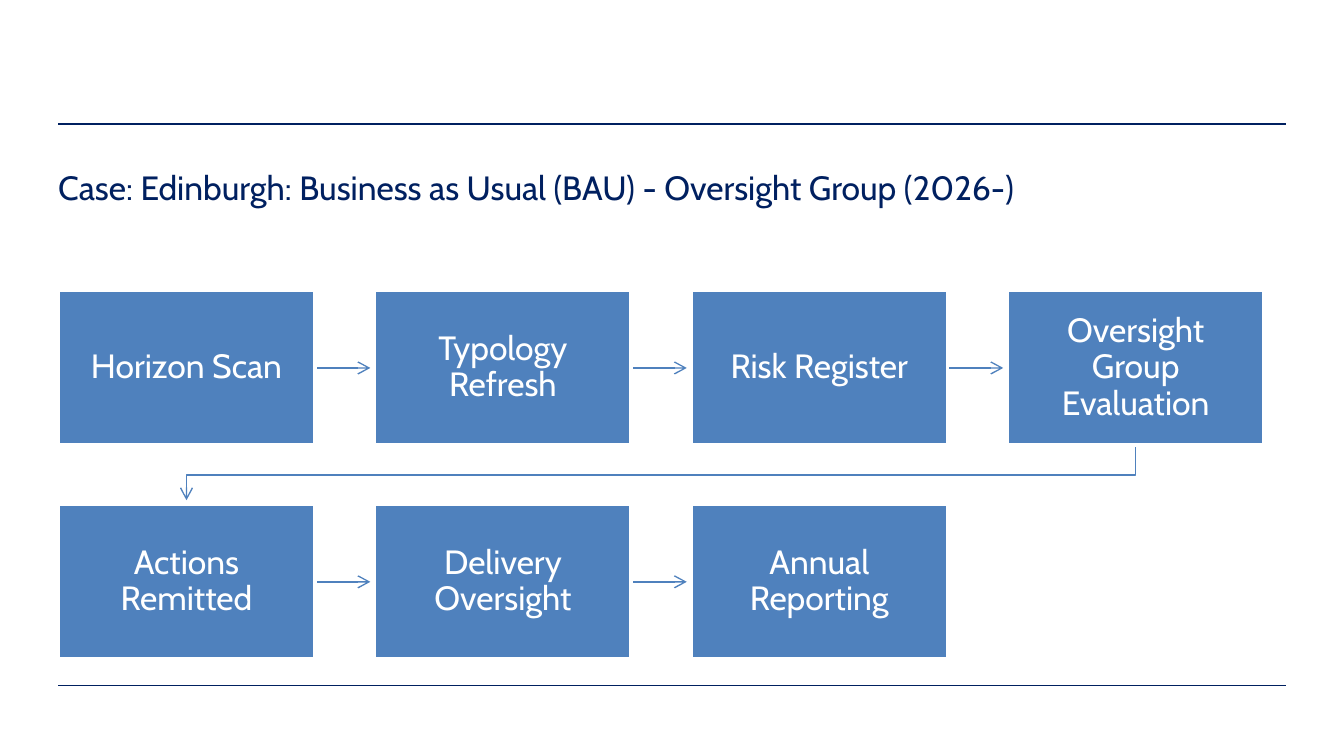
import pptx
import pptx.util
import pptx.dml.color
import pptx.enum.shapes
import pptx.enum.text
import pptx.oxml.ns
from dataclasses import dataclass
from lxml import etree

Cm, Pt = pptx.util.Cm, pptx.util.Pt
RGB = pptx.dml.color.RGBColor.from_string
ALIGN = pptx.enum.text.PP_ALIGN
ANCHOR = pptx.enum.text.MSO_ANCHOR


@dataclass(frozen=True)
class Theme:
    navy: str = "002060"
    blue: str = "4F81BD"
    white: str = "FFFFFF"
    face: str = "Cabin"
    size: int = 18
    thin: float = 0.75
    edge: float = 2


THEME = Theme()
TITLE = "Case: Edinburgh: Business as Usual (BAU) - Oversight Group (2026-)"
STEPS = ["Horizon Scan", "Typology Refresh", "Risk Register",
         "Oversight Group Evaluation", "Actions Remitted",
         "Delivery Oversight", "Annual Reporting"]

# Grid of steps, in centimetres
COLS = 4
LEFT, TOP = 1.1, 5.49
WIDE, HIGH = 4.85, 2.92
STEP_X, STEP_Y = 5.98, 4.04
GAP, REACH = 0.02, 1.03


def place(index):
    row, col = divmod(index, COLS)
    return LEFT + col * STEP_X, TOP + row * STEP_Y


def apply(target, values):
    for name, value in values.items():
        setattr(target, name, value)


def write(shape, text, color, frame, para):
    box = shape.text_frame
    box.text = text
    apply(box, {"word_wrap": True,
                "auto_size": pptx.enum.text.MSO_AUTO_SIZE.NONE, **frame})
    first = box.paragraphs[0]
    apply(first, para)
    apply(first.font, {"name": THEME.face, "size": Pt(THEME.size)})
    first.font.color.rgb = RGB(color)


def margins(size):
    sides = ("left", "right", "top", "bottom")
    return {f"margin_{side}": Cm(size) for side in sides}


def stroke(shape, color, arrow=False):
    shape.line.color.rgb = RGB(color)
    shape.line.width = Pt(THEME.thin)
    props = shape.element.spPr
    if arrow:
        etree.SubElement(props.get_or_add_ln(),
                         pptx.oxml.ns.qn("a:tailEnd"), type="arrow")
    etree.SubElement(props, pptx.oxml.ns.qn("a:effectLst"))


def add_line(slide, start, end, color, arrow=False):
    kind = pptx.enum.shapes.MSO_CONNECTOR.STRAIGHT
    ends = [Cm(value) for value in (*start, *end)]
    stroke(slide.shapes.add_connector(kind, *ends), color, arrow)


def add_bend(slide, points):
    first, *rest = [(Cm(x), Cm(y)) for x, y in points]
    pen = slide.shapes.build_freeform(*first)
    pen.add_line_segments(rest, close=False)
    bend = pen.convert_to_shape()
    bend.fill.background()
    stroke(bend, THEME.blue, arrow=True)


def add_link(slide, index):
    x, y = place(index)
    if (index + 1) % COLS:
        # Straight link to the next step in the row
        begin, mid = x + WIDE + GAP, y + HIGH / 2
        add_line(slide, (begin, mid), (begin + REACH, mid), THEME.blue, True)
    else:
        # Bent link down to the start of the next row
        next_x, next_y = place(index + 1)
        begin, end = x + WIDE / 2, next_x + WIDE / 2
        turn = (y + HIGH + next_y) / 2
        add_bend(slide, [(begin, y + HIGH), (begin, turn),
                         (end, turn), (end, next_y - 0.08)])


def add_step(slide, index, text):
    x, y = place(index)
    box = slide.shapes.add_shape(pptx.enum.shapes.MSO_SHAPE.RECTANGLE,
                                 Cm(x), Cm(y), Cm(WIDE), Cm(HIGH))
    box.shadow.inherit = False
    box.fill.solid()
    box.fill.fore_color.rgb = RGB(THEME.blue)
    box.line.color.rgb = RGB(THEME.white)
    box.line.width = Pt(THEME.edge)
    write(box, text, THEME.white,
          {"vertical_anchor": ANCHOR.MIDDLE, **margins(0.36)},
          {"alignment": ALIGN.CENTER, "line_spacing": 0.9,
           "space_after": Pt(6.3)})


def add_title(slide):
    title = slide.shapes.title
    apply(title, {"left": Cm(1.1), "top": Cm(3.15),
                  "width": Cm(22.43), "height": Cm(1.19)})
    write(title, TITLE, THEME.navy,
          {"vertical_anchor": ANCHOR.TOP, **margins(0)},
          {"alignment": ALIGN.LEFT})


def main():
    deck = pptx.Presentation()
    apply(deck, {"slide_width": Cm(25.4), "slide_height": Cm(14.28)})
    slide = deck.slides.add_slide(deck.slide_layouts[5])

    # Rules and title
    for y in (2.34, 12.95):
        add_line(slide, (1.1, y), (24.3, y), THEME.navy)
    add_title(slide)

    # Process: links lie behind the steps
    for index in range(len(STEPS) - 1):
        add_link(slide, index)
    for index, text in enumerate(STEPS):
        add_step(slide, index, text)

    deck.save("out.pptx")


if __name__ == "__main__":
    main()
